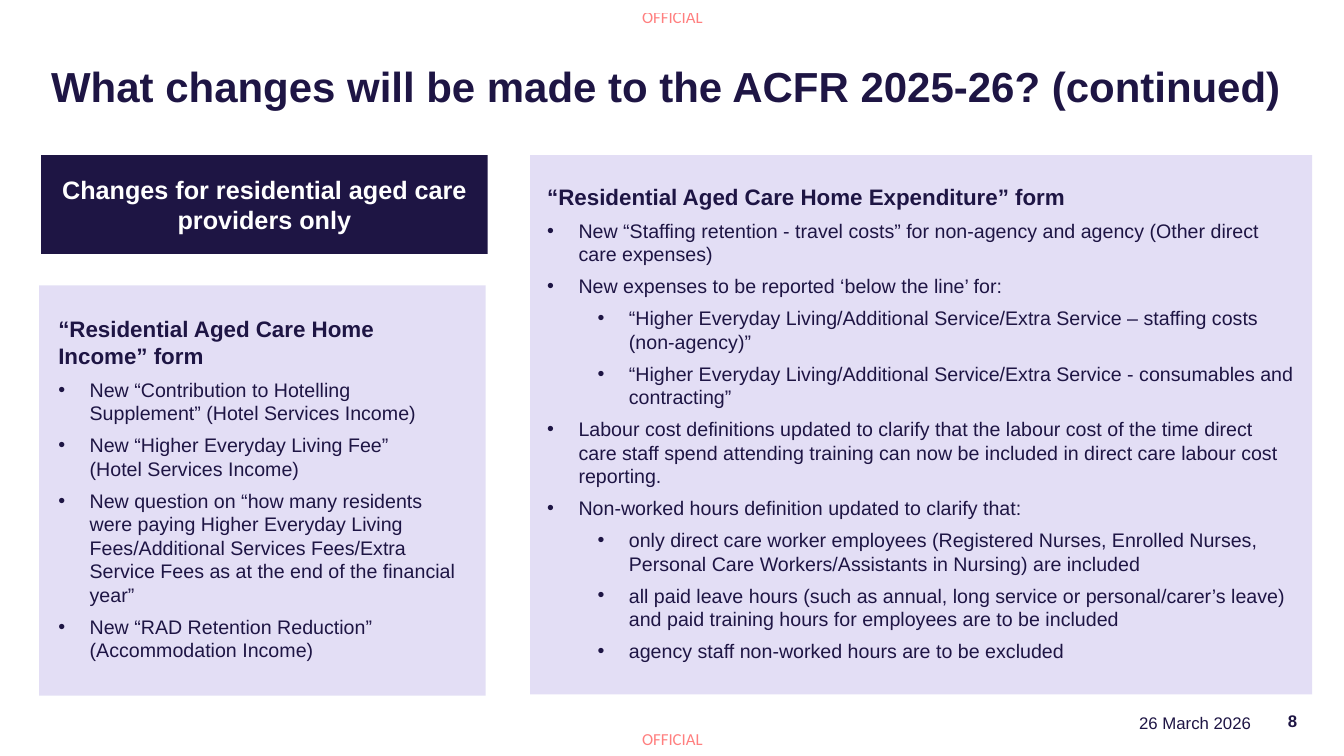
from pptx import Presentation
from pptx.dml.color import RGBColor
from pptx.enum.shapes import MSO_SHAPE
from pptx.enum.text import MSO_ANCHOR as Anchor, PP_ALIGN as Align
from pptx.oxml.ns import qn
from pptx.util import Cm, Pt
from lxml.etree import SubElement

NAVY = RGBColor(0x1E, 0x15, 0x44)
VIOLET = RGBColor(0x73, 0x5E, 0xCD)
RED = RGBColor(0xFF, 0x00, 0x00)
WHITE = RGBColor(0xFF, 0xFF, 0xFF)

BANNER_BOX = (1.04, 3.91, 11.25, 2.49)
INCOME_BOX = (0.99, 7.19, 11.25, 10.34)
EXPENDITURE_BOX = (13.36, 3.91, 19.71, 13.59)

# Each bullet is (level, text)
INCOME = [
    (0, "New “Contribution to Hotelling Supplement” (Hotel Services Income)"),
    (0, "New “Higher Everyday Living Fee”\v(Hotel Services Income)"),
    (0, "New question on “how many residents were paying Higher Everyday Living "
        "Fees/Additional Services Fees/Extra Service Fees as at the end of the "
        "financial year”"),
    (0, "New “RAD Retention Reduction” (Accommodation Income)"),
]
EXPENDITURE = [
    (0, "New “Staffing retention - travel costs” for non-agency and agency "
        "(Other direct care expenses)"),
    (0, "New expenses to be reported ‘below the line’ for:"),
    (1, "“Higher Everyday Living/Additional Service/Extra Service – staffing "
        "costs (non-agency)”"),
    (1, "“Higher Everyday Living/Additional Service/Extra Service - consumables "
        "and contracting”"),
    (0, "Labour cost definitions updated to clarify that the labour cost of the "
        "time direct care staff spend attending training can now be included in "
        "direct care labour cost reporting."),
    (0, "Non-worked hours definition updated to clarify that:"),
    (1, "only direct care worker employees (Registered Nurses, Enrolled Nurses, "
        "Personal Care Workers/Assistants in Nursing) are included"),
    (1, "all paid leave hours (such as annual, long service or personal/carer’s "
        "leave) and paid training hours for employees are to be included"),
    (1, "agency staff non‑worked hours are to be excluded"),
]


def set_format(target, values):
    for name, value in values.items():
        setattr(target, name, value)


def set_opacity(element, percent):
    """Make every colour inside the element partly transparent."""
    for colour in element.iter(qn("a:srgbClr")):
        SubElement(colour, qn("a:alpha"), val=str(percent * 1000))


def style_para(para, size, bold=False, colour=NAVY, font="Arial", **layout):
    set_format(para, layout)
    set_format(para.font, {"name": font, "size": Pt(size), "bold": bold})
    para.font.color.rgb = colour


def add_rectangle(page, box, colour):
    shape = page.shapes.add_shape(MSO_SHAPE.RECTANGLE, *map(Cm, box))
    shape.shadow.inherit = False
    shape.fill.solid()
    shape.fill.fore_color.rgb = colour
    shape.line.fill.background()
    return shape


def add_frame(page, box, margin=None, anchor=Anchor.TOP):
    frame = page.shapes.add_textbox(*map(Cm, box)).text_frame
    set_format(frame, {"word_wrap": True, "vertical_anchor": anchor})
    if margin is not None:
        sides = ("left", "top", "right", "bottom")
        set_format(frame, {f"margin_{side}": Cm(margin) for side in sides})
    return frame


def add_label(page, box, text, size, anchor=Anchor.TOP, **style):
    para = add_frame(page, box, anchor=anchor).paragraphs[0]
    para.text = text
    style_para(para, size, **style)


def add_marking(page, box):
    """Place the security marking at the edge of the page."""
    frame = add_frame(page, box, margin=0)
    frame.word_wrap = False
    para = frame.paragraphs[0]
    span = para.add_run()
    span.text = "OFFICIAL"
    set_format(span.font, {"name": "Calibri", "size": Pt(12)})
    span.font.color.rgb = RED
    set_opacity(span.font._element, 50)


def add_banner(page, box, text):
    frame = add_rectangle(page, box, NAVY).text_frame
    set_format(frame, {"word_wrap": True, "vertical_anchor": Anchor.MIDDLE})
    para = frame.paragraphs[0]
    para.text = text
    style_para(para, 18, bold=True, colour=WHITE, alignment=Align.CENTER)


def add_bullet(frame, level, text):
    para = frame.add_paragraph()
    para.text = text
    para.level = level
    properties = para._p.get_or_add_pPr()
    properties.set("marL", str(Cm(0.79 + 1.27 * level)))
    properties.set("indent", str(Cm(-0.79)))
    SubElement(properties, qn("a:buFont"), typeface="Arial")
    SubElement(properties, qn("a:buChar"), char="•")
    style_para(para, 14, space_before=Pt(3), space_after=Pt(3))


def add_form_panel(page, box, inset, heading, bullets):
    """Draw a tinted panel with a heading and bullets inset by (x, y)."""
    set_opacity(add_rectangle(page, box, VIOLET).fill._xPr, 20)
    left, top, width, height = box
    across, down = inset
    frame = add_frame(page, (left + across, top + down,
                             width - 2 * across, height - 2 * down), margin=0)
    para = frame.paragraphs[0]
    para.text = heading
    style_para(para, 16, bold=True, space_after=Pt(3))
    for level, text in bullets:
        add_bullet(frame, level, text)


def add_page_furniture(page):
    for top in (0.18, 18.36):
        add_marking(page, (16.18, top, 1.62, 0.5))
    add_label(page, (24.16, 17.83, 7.62, 0.76), "26 March 2026", 12,
              alignment=Align.RIGHT)
    add_label(page, (31.8, 17.65, 1.14, 1.02), "8", 12, anchor=Anchor.MIDDLE,
              bold=True, alignment=Align.RIGHT)


def main():
    deck = Presentation()
    set_format(deck, {"slide_width": Cm(33.87), "slide_height": Cm(19.05)})
    page = deck.slides.add_slide(deck.slide_layouts[6])
    add_page_furniture(page)
    add_label(page, (1.04, 1.47, 31.8, 1.52),
              "What changes will be made to the ACFR 2025-26? (continued)", 30,
              anchor=Anchor.MIDDLE, bold=True, line_spacing=0.9)
    add_banner(page, BANNER_BOX, "Changes for residential aged care providers only")
    add_form_panel(page, INCOME_BOX, (0.48, 0.76),
                   "“Residential Aged Care Home Income” form", INCOME)
    add_form_panel(page, EXPENDITURE_BOX, (0.43, 0.71),
                   "“Residential Aged Care Home Expenditure” form", EXPENDITURE)
    deck.save("out.pptx")


if __name__ == "__main__":
    main()
